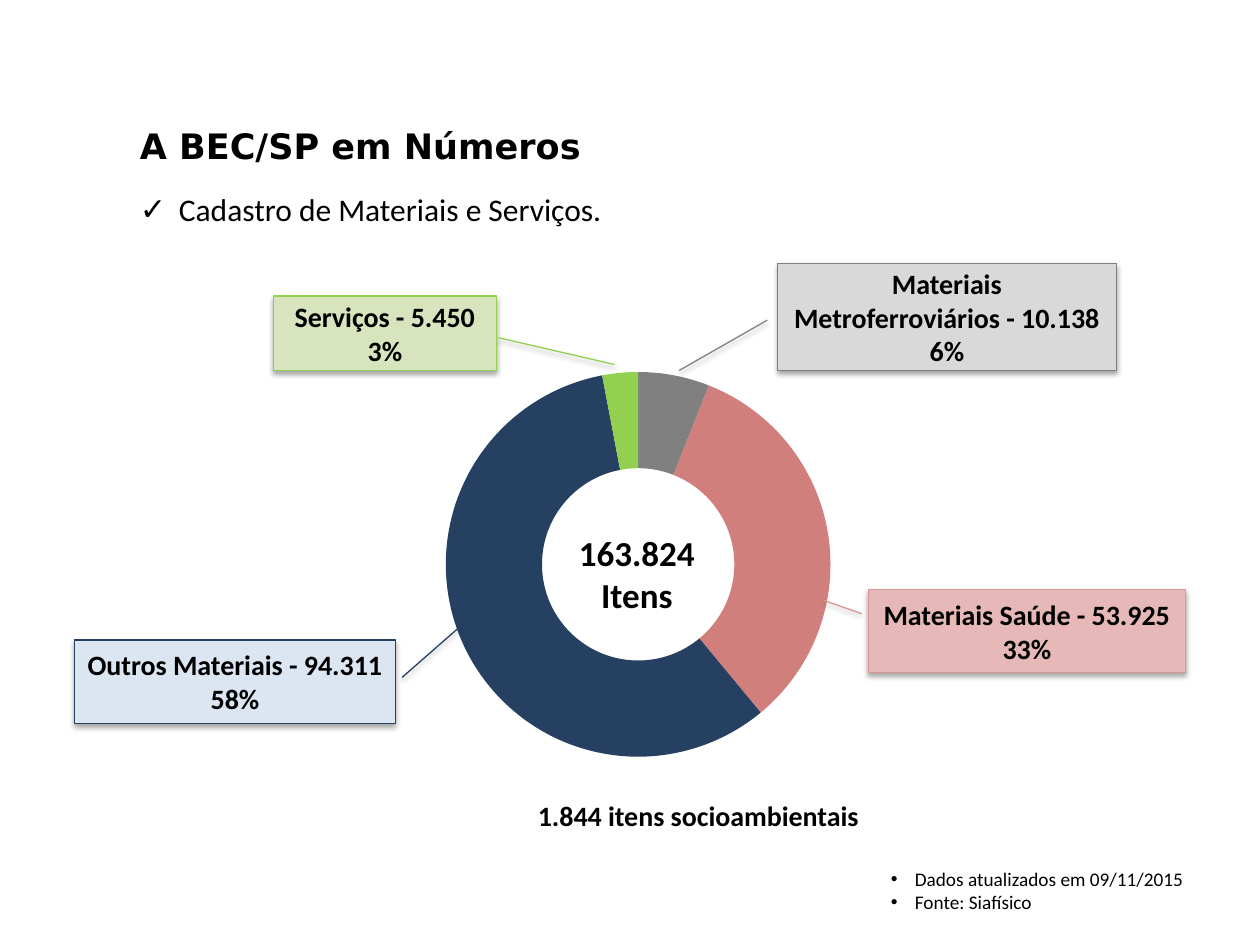
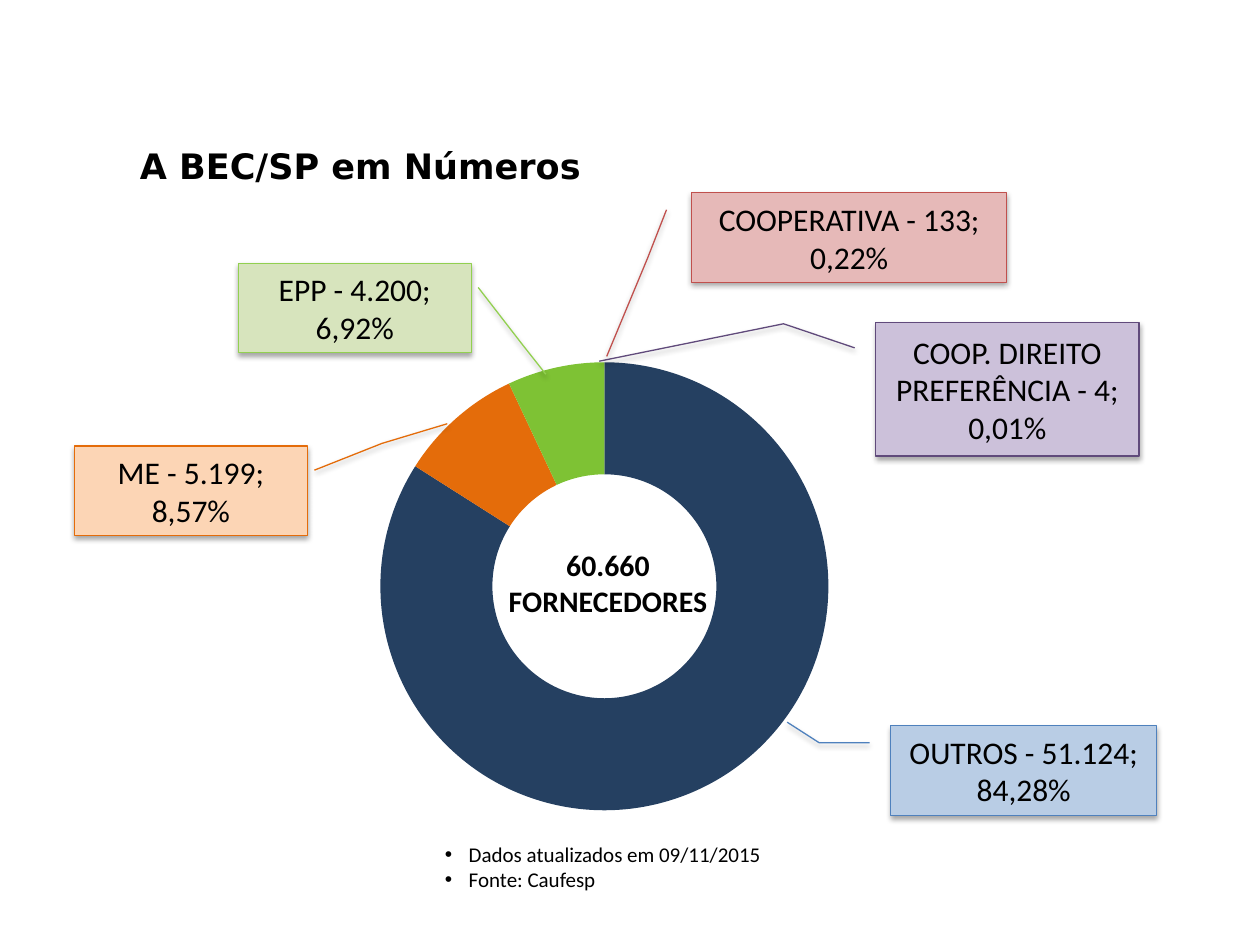
from dataclasses import dataclass

import pptx
import pptx.chart.data
import pptx.dml.color
import pptx.enum.chart
import pptx.enum.shapes
import pptx.enum.text
import pptx.oxml
import pptx.oxml.ns
import pptx.util
from pptx.util import Inches

ALIGN = pptx.enum.text.PP_ALIGN
ANCHOR = pptx.enum.text.MSO_ANCHOR
SHAPE = pptx.enum.shapes.MSO_SHAPE


@dataclass(frozen=True)
class Theme:
    title_font: str = "DejaVu Sans"
    body_font: str = "Calibri"
    ink: str = "000000"
    navy: str = "254061"
    gray: str = "808080"
    lime: str = "92D050"
    orange: str = "E46C0A"
    pale_red: str = "E6B9B8"
    pale_green: str = "D7E4BD"
    chart_size: int = 10
    title_size: int = 20
    total_size: int = 20
    suppliers_size: int = 17
    list_size: int = 18
    label_size: int = 16
    supplier_label_size: int = 18
    items_source_size: int = 11
    suppliers_source_size: int = 12
    line_width: float = 0.75


THEME = Theme()
TITLE = "A BEC/SP em Números"
UPDATED = "Dados atualizados em 09/11/2015"


def color(value):
    return pptx.dml.color.RGBColor.from_string(value)


def place(shape, bounds):
    shape.left, shape.top, shape.width, shape.height = map(Inches, bounds)


def style_font(font, size, bold=False, name=THEME.body_font):
    font.name = name
    font.size = pptx.util.Pt(size)
    font.bold = bold
    font.color.rgb = color(THEME.ink)


def add_bullet(para, mark, indent):
    properties = para._p.get_or_add_pPr()
    properties.set("marL", str(Inches(indent)))
    properties.set("indent", str(Inches(-indent)))
    bullet = pptx.oxml.parse_xml(
        f'<a:buChar {pptx.oxml.ns.nsdecls("a")} char="{mark}"/>')
    properties.append(bullet)


def write(frame, lines, size, bold=False, align=ALIGN.LEFT, anchor=ANCHOR.TOP,
          name=THEME.body_font, mark=None, indent=0):
    frame.word_wrap = True
    frame.auto_size = pptx.enum.text.MSO_AUTO_SIZE.NONE
    frame.vertical_anchor = anchor
    for number, line in enumerate(lines):
        para = frame.add_paragraph() if number else frame.paragraphs[0]
        para.alignment = align
        para.space_before = pptx.util.Pt(0)
        if mark:
            add_bullet(para, mark, indent)
        span = para.add_run()
        span.text = line
        style_font(span.font, size, bold, name)


def add_title(page, top):
    place(page.shapes.title, (1.01, top, 8.4, 0.68))
    write(page.shapes.title.text_frame, [TITLE], THEME.title_size, True,
          name=THEME.title_font)


def fill_list(page, index, bounds, lines, size, mark="•", indent=0.19):
    body = page.placeholders[index]
    place(body, bounds)
    write(body.text_frame, lines, size, mark=mark, indent=indent)


def add_text(page, bounds, lines, size, align=ALIGN.CENTER):
    box = page.shapes.add_textbox(*map(Inches, bounds))
    write(box.text_frame, lines, size, True, align)


def set_plot_layout(chart, layout):
    edges = "".join(f'<c:{key} val="{value}"/>' for key, value in zip("xywh", layout))
    plot_area = chart._chartSpace.chart.plotArea
    for old_layout in plot_area.findall(pptx.oxml.ns.qn("c:layout")):
        plot_area.remove(old_layout)
    plot_area.insert(0, pptx.oxml.parse_xml(
        f'<c:layout {pptx.oxml.ns.nsdecls("c")}><c:manualLayout>'
        '<c:layoutTarget val="inner"/><c:xMode val="edge"/><c:yMode val="edge"/>'
        f'{edges}</c:manualLayout></c:layout>'))


def add_doughnut(page, bounds, layout, slices):
    data = pptx.chart.data.CategoryChartData()
    data.categories = [str(number + 1) for number in range(len(slices))]
    data.add_series("Series 1", [value for value, _ in slices])
    chart = page.shapes.add_chart(pptx.enum.chart.XL_CHART_TYPE.DOUGHNUT,
                                  *map(Inches, bounds), data).chart
    chart.has_legend = False
    chart.has_title = False
    style_font(chart.font, THEME.chart_size)
    plot = chart.plots[0]
    plot.vary_by_categories = True
    for number, (_, slice_color) in enumerate(slices):
        look = plot.series[0].points[number].format
        look.fill.solid()
        look.fill.fore_color.rgb = color(slice_color)
        look.line.fill.background()
    set_plot_layout(chart, layout)


def add_soft_shadow(shape):
    shape.shadow.inherit = False
    effects = shape._element.spPr.find(pptx.oxml.ns.qn("a:effectLst"))
    effects.append(pptx.oxml.parse_xml(
        f'<a:outerShdw {pptx.oxml.ns.nsdecls("a")} blurRad="{pptx.util.Pt(3.1)}" '
        f'dist="{pptx.util.Pt(1.8)}" dir="5400000" rotWithShape="0">'
        '<a:srgbClr val="000000"><a:alpha val="35000"/></a:srgbClr></a:outerShdw>'))


def add_callout(page, bounds, leader, fill, line, lines, size, bold=False):
    kind = SHAPE.LINE_CALLOUT_1 if len(leader) == 4 else SHAPE.LINE_CALLOUT_2
    callout = page.shapes.add_shape(kind, *map(Inches, bounds))
    for number, value in enumerate(leader):
        callout.adjustments[number] = value
    callout.fill.solid()
    callout.fill.fore_color.rgb = color(fill)
    callout.line.color.rgb = color(line)
    callout.line.width = pptx.util.Pt(THEME.line_width)
    add_soft_shadow(callout)
    write(callout.text_frame, lines, size, bold, ALIGN.CENTER, ANCHOR.MIDDLE)


def build_items(deck):
    page = deck.slides.add_slide(deck.slide_layouts[3])
    add_title(page, 0.94)
    fill_list(page, 1, (1.01, 1.46, 8.48, 0.4), ["Cadastro de Materiais e Serviços."],
              THEME.list_size, "✓", 0.31)
    fill_list(page, 2, (6.97, 6.83, 2.76, 0.47), [UPDATED, "Fonte: Siafísico"],
              THEME.items_source_size)
    add_doughnut(page, (3, 2.82, 4.13, 3.32), (0.13, 0.04, 0.74, 0.92),
                 [(6, THEME.gray), (33, "D17F7D"), (58, THEME.navy), (3, "93D050")])
    callouts = [
        ((6.89, 4.68, 2.52, 0.66), (0.29, -0.02, 0.13, -0.14), THEME.pale_red, "D99694",
         ["Materiais Saúde - 53.925", "33%"]),
        ((0.59, 5.08, 2.55, 0.66), (0.45, 1.02, -0.16, 1.2), "DCE6F2", THEME.navy,
         ["Outros Materiais - 94.311", "58%"]),
        ((2.17, 2.35, 1.77, 0.59), (0.56, 1.01, 0.92, 1.53), THEME.pale_green, THEME.lime,
         ["Serviços - 5.450", "3%"]),
        ((6.17, 2.09, 2.69, 0.85), (0.53, -0.03, 1, -0.29), "D9D9D9", THEME.gray,
         ["Materiais Metroferroviários - 10.138", "6%"]),
    ]
    for callout in callouts:
        add_callout(page, *callout, THEME.label_size, True)
    add_text(page, (4.37, 4.17, 1.37, 0.77), ["163.824", "Itens"], THEME.total_size)
    add_text(page, (4.17, 6.29, 3.04, 0.37), ["1.844 itens socioambientais"],
             THEME.label_size, ALIGN.LEFT)


def build_suppliers(deck):
    page = deck.slides.add_slide(deck.slide_layouts[1])
    add_title(page, 1.1)
    fill_list(page, 1, (3.43, 6.63, 2.76, 0.5), [UPDATED, "Fonte: Caufesp"],
              THEME.suppliers_source_size)
    add_doughnut(page, (1.61, 2.24, 6.71, 4.43), (0.21, 0.14, 0.53, 0.81),
                 [(84, THEME.navy), (9, THEME.orange), (7, "7EC234"),
                  (0, "8064A2"), (0, "4BACC6")])
    callouts = [
        ((7.07, 5.76, 2.11, 0.71), (0.19, -0.08, 0.19, -0.27, -0.04, -0.39),
         "B9CDE5", "4F81BD", "OUTROS - 51.124; 84,28%"),
        ((6.95, 2.56, 2.09, 1.06), (0.19, -0.08, 0.01, -0.35, 0.29, -1.05),
         "CCC1DA", "604A7B", "COOP. DIREITO PREFERÊNCIA - 4; 0,01%"),
        ((5.49, 1.53, 2.5, 0.71), (0.19, -0.08, 0.73, -0.14, 1.83, -0.27),
         THEME.pale_red, "C0504D", "COOPERATIVA - 133; 0,22%"),
        ((1.89, 2.09, 1.85, 0.71), (0.27, 1.03, 0.91, 1.22, 1.24, 1.32),
         THEME.pale_green, THEME.lime, "EPP - 4.200; 6,92%"),
        ((0.59, 3.54, 1.85, 0.71), (0.27, 1.03, -0.03, 1.32, -0.25, 1.6),
         "FCD5B5", THEME.orange, "ME - 5.199; 8,57%"),
    ]
    for bounds, leader, fill, line, label in callouts:
        add_callout(page, bounds, leader, fill, line, [label], THEME.supplier_label_size)
    add_text(page, (3.78, 4.29, 2.09, 0.67), ["60.660 FORNECEDORES"],
             THEME.suppliers_size)


def main():
    deck = pptx.Presentation()
    deck.slide_width, deck.slide_height = Inches(10), Inches(7.5)
    build_items(deck)
    build_suppliers(deck)
    deck.save("out.pptx")


if __name__ == "__main__":
    main()
